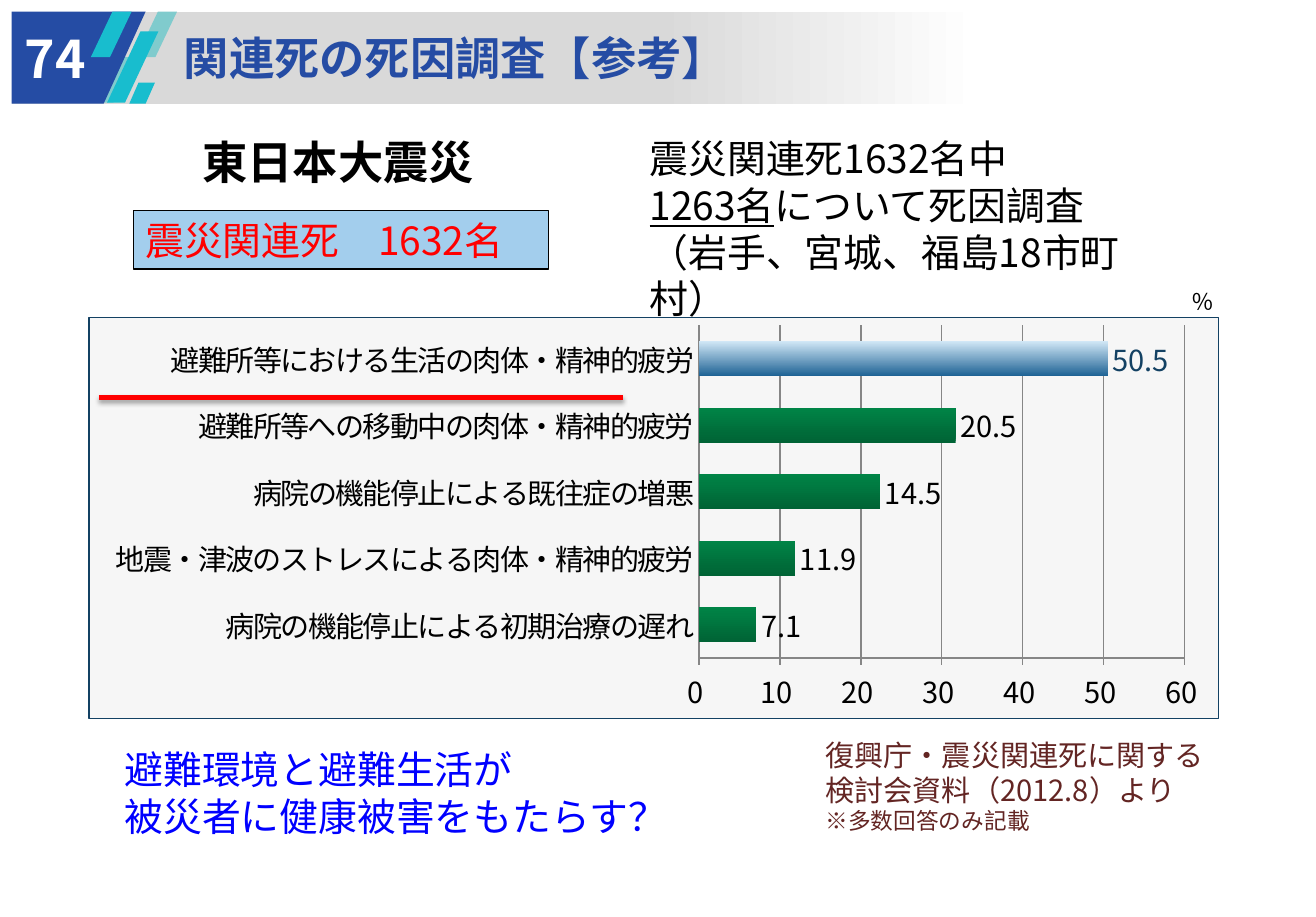
from dataclasses import dataclass

from lxml import etree
from pptx import Presentation
from pptx.chart.data import CategoryChartData
from pptx.dml.color import RGBColor
from pptx.enum.chart import XL_CHART_TYPE, XL_LABEL_POSITION, XL_TICK_MARK
from pptx.enum.shapes import MSO_CONNECTOR, MSO_SHAPE
from pptx.enum.text import MSO_ANCHOR, PP_ALIGN
from pptx.oxml import parse_xml
from pptx.oxml.ns import nsdecls, qn
from pptx.util import Inches, Pt

BAR_CLUSTERED = XL_CHART_TYPE.BAR_CLUSTERED
OUTSIDE_END = XL_LABEL_POSITION.OUTSIDE_END
TICK_NONE, TICK_OUTSIDE = XL_TICK_MARK.NONE, XL_TICK_MARK.OUTSIDE
STRAIGHT = MSO_CONNECTOR.STRAIGHT
RECTANGLE, PARALLELOGRAM = MSO_SHAPE.RECTANGLE, MSO_SHAPE.PARALLELOGRAM
TOP, MIDDLE = MSO_ANCHOR.TOP, MSO_ANCHOR.MIDDLE
LEFT, CENTER = PP_ALIGN.LEFT, PP_ALIGN.CENTER


@dataclass(frozen=True)
class Theme:
    font: str = "Noto Sans CJK JP"
    navy: str = "254CA4"
    teal: str = "18BDCE"
    pale_teal: str = "80CBCD"
    band: str = "D9D9D9"
    white: str = "FFFFFF"
    black: str = "000000"
    red: str = "FF0000"
    blue: str = "0000FF"
    brown: str = "632523"
    sky: str = "A3CEED"
    panel: str = "F2F2F2"
    panel_border: str = "134163"
    grid: str = "868686"
    green: str = "008446"
    dark_green: str = "006335"
    light_blue: str = "D1E7F6"
    dark_blue: str = "1D6294"
    number: int = 32
    heading: int = 28
    body: int = 24
    label: int = 18
    note: int = 14


def color(value):
    return RGBColor.from_string(value)


def style_font(font, name, size, ink, bold=False, underline=False):
    font.name, font.size = name, Pt(size)
    font.bold, font.underline = bold, underline
    font.color.rgb = color(ink)


def write(frame, lines, name, size, ink, bold=False, align=LEFT, anchor=TOP, inset=(0.1, 0.05)):
    frame.word_wrap = True
    frame.vertical_anchor = anchor
    frame.margin_left = frame.margin_right = Inches(inset[0])
    frame.margin_top = frame.margin_bottom = Inches(inset[1])
    for index, line in enumerate(lines):
        paragraph = frame.paragraphs[0] if index == 0 else frame.add_paragraph()
        paragraph.alignment = align
        for text, changes in [(line, {})] if isinstance(line, str) else line:
            run = paragraph.add_run()
            run.text = text
            style_font(run.font, **{"name": name, "size": size, "ink": ink, "bold": bold, **changes})
            etree.SubElement(run.font._element, qn("a:ea"), typeface=name)


def fill_gradient(fill, stops, angle):
    fill.gradient()
    fill.gradient_angle = angle
    for stop, (position, value) in zip(fill.gradient_stops, stops):
        stop.position = position
        stop.color.rgb = color(value)


class SlideBuilder:
    def __init__(self, slide, theme):
        self.slide, self.theme = slide, theme

    def finish(self, shape, fill, line=None):
        shape.shadow.inherit = False
        if isinstance(fill, str):
            shape.fill.solid()
            shape.fill.fore_color.rgb = color(fill)
        else:
            fill_gradient(shape.fill, fill, 0)
        if line:
            shape.line.color.rgb = color(line)
            shape.line.width = Pt(0.75)
        else:
            shape.line.fill.background()
        return shape

    def shape(self, kind, box, fill, line=None, slant=None):
        shape = self.slide.shapes.add_shape(kind, *map(Inches, box))
        if slant is not None:
            shape.adjustments[0] = slant
        return self.finish(shape, fill, line)

    def outline(self, points, fill):
        corners = [(Inches(x), Inches(y)) for x, y in points]
        builder = self.slide.shapes.build_freeform(*corners[0])
        builder.add_line_segments(corners[1:], close=True)
        return self.finish(builder.convert_to_shape(), fill)

    def text(self, box, lines, **style):
        shape = self.slide.shapes.add_textbox(*map(Inches, box))
        write(shape.text_frame, lines, self.theme.font, **style)

    def panel(self, box, lines, fill, line=None, **style):
        shape = self.shape(RECTANGLE, box, fill, line)
        write(shape.text_frame, lines, self.theme.font, **style)

    def underline(self, start, end, ink):
        line = self.slide.shapes.add_connector(STRAIGHT, *map(Inches, start + end))
        line.line.color.rgb = color(ink)
        line.line.width = Pt(3)
        line._element.spPr.append(parse_xml(
            f'<a:effectLst {nsdecls("a")}><a:outerShdw blurRad="{Pt(3.1)}" dist="{Pt(1.6)}" dir="5400000">'
            f'<a:srgbClr val="{self.theme.black}"><a:alpha val="38000"/></a:srgbClr>'
            '</a:outerShdw></a:effectLst>'))

    def bar_chart(self, box, values, shown_labels, plot):
        theme = self.theme
        data = CategoryChartData()
        data.categories = list(values)
        data.add_series("Series 1", list(values.values()))
        chart = self.slide.shapes.add_chart(BAR_CLUSTERED, *map(Inches, box), data).chart
        chart.has_legend = chart.has_title = False
        style_font(chart.font, theme.font, theme.label, theme.black)
        for axis in (chart.category_axis, chart.value_axis):
            style_font(axis.tick_labels.font, theme.font, theme.label, theme.black)
            axis.format.line.color.rgb = color(theme.grid)
            axis.minor_tick_mark = TICK_NONE
        chart.category_axis.major_tick_mark = TICK_NONE
        chart.category_axis.tick_labels.font._element.set("spc", "-100")
        axis = chart.value_axis
        axis.minimum_scale, axis.maximum_scale, axis.major_unit = 0, 60, 10
        axis.major_tick_mark = TICK_OUTSIDE
        axis.has_major_gridlines = True
        axis.major_gridlines.format.line.color.rgb = color(theme.grid)
        axis.tick_labels.number_format = r"#,##0_);[Red]\(#,##0\)"
        axis.tick_labels.number_format_is_linked = False

        bars = chart.plots[0]
        bars.gap_width, bars.vary_by_categories = 90, False
        series = bars.series[0]
        fill_gradient(series.format.fill, [(0, theme.dark_green), (1, theme.green)], 90)
        last = len(values) - 1
        fill_gradient(series.points[last].format.fill, [(0, theme.dark_blue), (1, theme.light_blue)], 90)
        labels = series.data_labels
        labels.show_value, labels.position = True, OUTSIDE_END
        labels.number_format, labels.number_format_is_linked = "0.0", False
        style_font(labels.font, theme.font, theme.label, theme.black)
        for index, text in shown_labels.items():
            label = series.points[index].data_label
            ink = theme.panel_border if index == last else theme.black
            label.text_frame.text = text
            style_font(label.text_frame.paragraphs[0].runs[0].font, theme.font, theme.label, ink)
            label.position = OUTSIDE_END

        plot_area = chart._chartSpace.chart.plotArea
        for layout in plot_area.findall(qn("c:layout")):
            plot_area.remove(layout)
        sides = "".join(f'<c:{side} val="{value}"/>' for side, value in zip("xywh", plot))
        plot_area.insert(0, parse_xml(
            f'<c:layout {nsdecls("c")}><c:manualLayout><c:layoutTarget val="inner"/>'
            f'<c:xMode val="edge"/><c:yMode val="edge"/>{sides}</c:manualLayout></c:layout>'))
        chart._chartSpace.chart.addnext(parse_xml(
            f'<c:spPr {nsdecls("c", "a")}><a:solidFill><a:srgbClr val="{theme.panel}"><a:alpha val="63000"/>'
            f'</a:srgbClr></a:solidFill><a:ln w="{Pt(0.75)}"><a:solidFill>'
            f'<a:srgbClr val="{theme.panel_border}"/></a:solidFill></a:ln></c:spPr>'))


def main():
    theme = Theme()
    presentation = Presentation()
    presentation.slide_width, presentation.slide_height = Inches(11.3), Inches(7.87)
    builder = SlideBuilder(presentation.slides.add_slide(presentation.slide_layouts[6]), theme)

    builder.shape(RECTANGLE, (0.1, 0.1, 11.09, 0.79), [(0.5, theme.band), (0.75, theme.white)])
    builder.shape(PARALLELOGRAM, (0.81, 0.49, 0.35, 0.39), theme.pale_teal, slant=0.53)
    builder.outline([(0.1, 0.1), (1.25, 0.1), (0.89, 0.89), (0.1, 0.89)], theme.navy)
    for box, fill, slant in [
        ((0.78, 0.1, 0.35, 0.39), theme.teal, 0.53),
        ((1.11, 0.71, 0.22, 0.18), theme.teal, 0.44),
        ((1.17, 0.1, 0.35, 0.39), theme.pale_teal, 0.53),
        ((0.92, 0.27, 0.44, 0.61), theme.teal, 0.65),
    ]:
        builder.shape(PARALLELOGRAM, box, fill, slant=slant)
    builder.text((1.58, 0.26, 5.91, 0.43), ["関連死の死因調査【参考】"],
                 size=theme.heading, ink=theme.navy, bold=True, inset=(0, 0))
    builder.text((0.15, 0.22, 0.65, 0.55), ["74"], size=theme.number, ink=theme.white,
                 bold=True, align=CENTER, anchor=MIDDLE, inset=(0, 0))

    builder.panel((1.15, 1.81, 3.56, 0.5), ["震災関連死\u30001632名".replace("\u3000", "　")],
                  theme.sky, theme.black, size=theme.body, ink=theme.red)
    builder.text((6.99, 6.28, 3.61, 0.94),
                 ["復興庁・震災関連死に関する", "検討会資料（2012.8）より",
                  [("※多数回答のみ記載", {"size": theme.note})]],
                 size=theme.label, ink=theme.brown)
    builder.text((1.64, 1.1, 2.56, 0.57), ["東日本大震災"],
                 size=theme.heading, ink=theme.black, bold=True)
    builder.text((5.48, 1.11, 4.44, 1.31),
                 ["震災関連死1632名中",
                  [("1263名", {"underline": True}), ("について死因調査", {})],
                  "（岩手、宮城、福島18市町村）"],
                 size=theme.body, ink=theme.black)

    causes = {
        "病院の機能停止による初期治療の遅れ": 7.1,
        "地震・津波のストレスによる肉体・精神的疲労": 11.9,
        "病院の機能停止による既往症の増悪": 22.4,
        "避難所等への移動中の肉体・精神的疲労": 31.7,
        "避難所等における生活の肉体・精神的疲労": 50.5,
    }
    builder.bar_chart((0.76, 2.72, 9.71, 3.45), causes,
                      {2: "14.5", 3: "20.5", 4: "50.5"}, (0.54, 0.02, 0.43, 0.83))
    builder.underline((0.85, 3.41), (5.35, 3.41), theme.red)
    builder.panel((0.97, 6.35, 5.68, 0.91), ["避難環境と避難生活が", "被災者に健康被害をもたらす？"],
                  theme.white, size=theme.body, ink=theme.blue)
    builder.text((10.13, 2.42, 0.47, 0.34), ["％"], size=theme.note, ink=theme.black)
    presentation.save("out.pptx")


if __name__ == "__main__":
    main()
